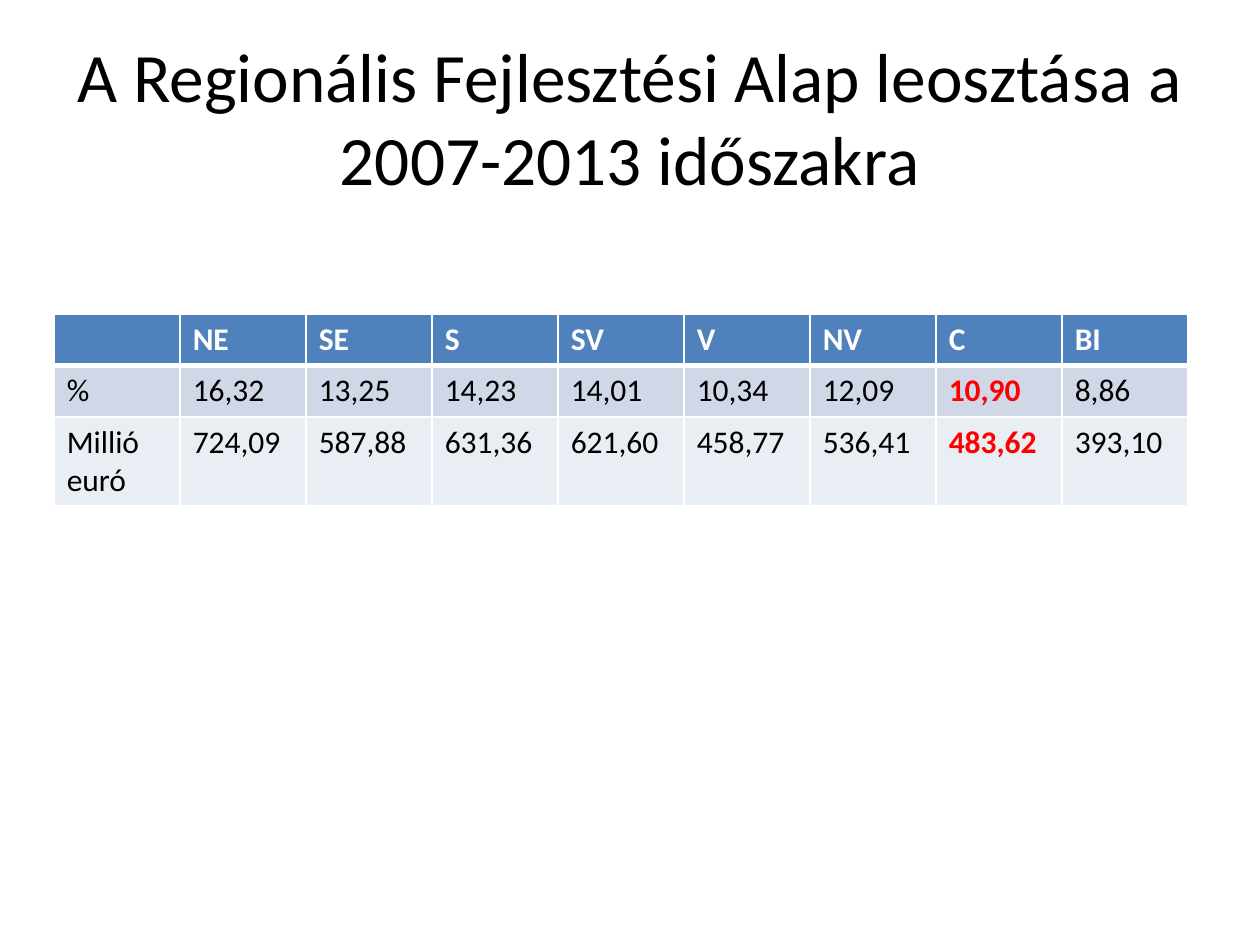
from dataclasses import dataclass

from lxml.etree import SubElement
from pptx import Presentation
from pptx.dml.color import RGBColor
from pptx.enum.text import MSO_ANCHOR, PP_ALIGN
from pptx.oxml.ns import qn
from pptx.util import Inches, Pt

WIDE, HIGH = Inches(10), Inches(7.5)
WHITE, BLACK, RED = "FFFFFF", "000000", "FF0000"
TITLE = "A Regionális Fejlesztési Alap leosztása a 2007-2013 időszakra"
MARKED = 7


@dataclass
class Row:
    texts: list[str]
    fill: str
    high: float
    ink: str = BLACK
    bold: bool = False
    base: int = 1


ROWS = [
    Row(["", "NE", "SE", "S", "SV", "V", "NV", "C", "BI"],
        "4F81BD", 0.41, WHITE, True, 3),
    Row(["%", "16,32", "13,25", "14,23", "14,01", "10,34", "12,09", "10,90", "8,86"],
        "D0D8E8", 0.41),
    Row(["Millió euró", "724,09", "587,88", "631,36", "621,60", "458,77", "536,41",
         "483,62", "393,10"], "E9EDF4", 0.69),
]


def tint(code: str) -> RGBColor:
    return RGBColor.from_string(code)


def write(frame, text: str, size: float, ink: str, bold: bool = False) -> None:
    run = frame.paragraphs[0].add_run()
    run.text = text
    look = {"name": "Calibri", "size": Pt(size), "bold": bold}
    for key, value in look.items():
        setattr(run.font, key, value)
    run.font.color.rgb = tint(ink)


def edge(cell, base: int, top: int) -> None:
    props = cell._tc.get_or_add_tcPr()
    sides = {"lnL": 1, "lnR": 1, "lnT": top, "lnB": base}
    for spot, (side, width) in enumerate(sides.items()):
        line = SubElement(props, qn(f"a:{side}"), w=str(Pt(width)))
        fill = SubElement(line, qn("a:solidFill"))
        SubElement(fill, qn("a:srgbClr"), val=WHITE)
        props.insert(spot, line)


def head(slide) -> None:
    box = slide.shapes.add_textbox(
        int(WIDE * 0.05), int(HIGH * 0.04), int(WIDE * 0.9), Inches(1.25))
    frame = box.text_frame
    look = {"word_wrap": True, "vertical_anchor": MSO_ANCHOR.MIDDLE}
    for key, value in look.items():
        setattr(frame, key, value)
    frame.paragraphs[0].alignment = PP_ALIGN.CENTER
    write(frame, TITLE, 39.6, BLACK)


def grid(slide, rows: list[Row]) -> None:
    count = len(rows[0].texts)
    high = Inches(sum(row.high for row in rows))
    table = slide.shapes.add_table(
        len(rows), count, Inches(0.43), Inches(2.49), int(WIDE * 0.9), high).table
    top = 1
    for r, row in enumerate(rows):
        table.rows[r].height = Inches(row.high)
        for c, text in enumerate(row.texts):
            cell = table.cell(r, c)
            cell.fill.solid()
            cell.fill.fore_color.rgb = tint(row.fill)
            edge(cell, row.base, top)
            hot = r > 0 and c == MARKED
            if text:
                write(cell.text_frame, text, 18, RED if hot else row.ink, hot or row.bold)
        top = row.base


def main() -> None:
    deck = Presentation()
    deck.slide_width, deck.slide_height = WIDE, HIGH
    slide = deck.slides.add_slide(deck.slide_layouts[6])
    head(slide)
    grid(slide, ROWS)
    deck.save("out.pptx")


if __name__ == "__main__":
    main()
